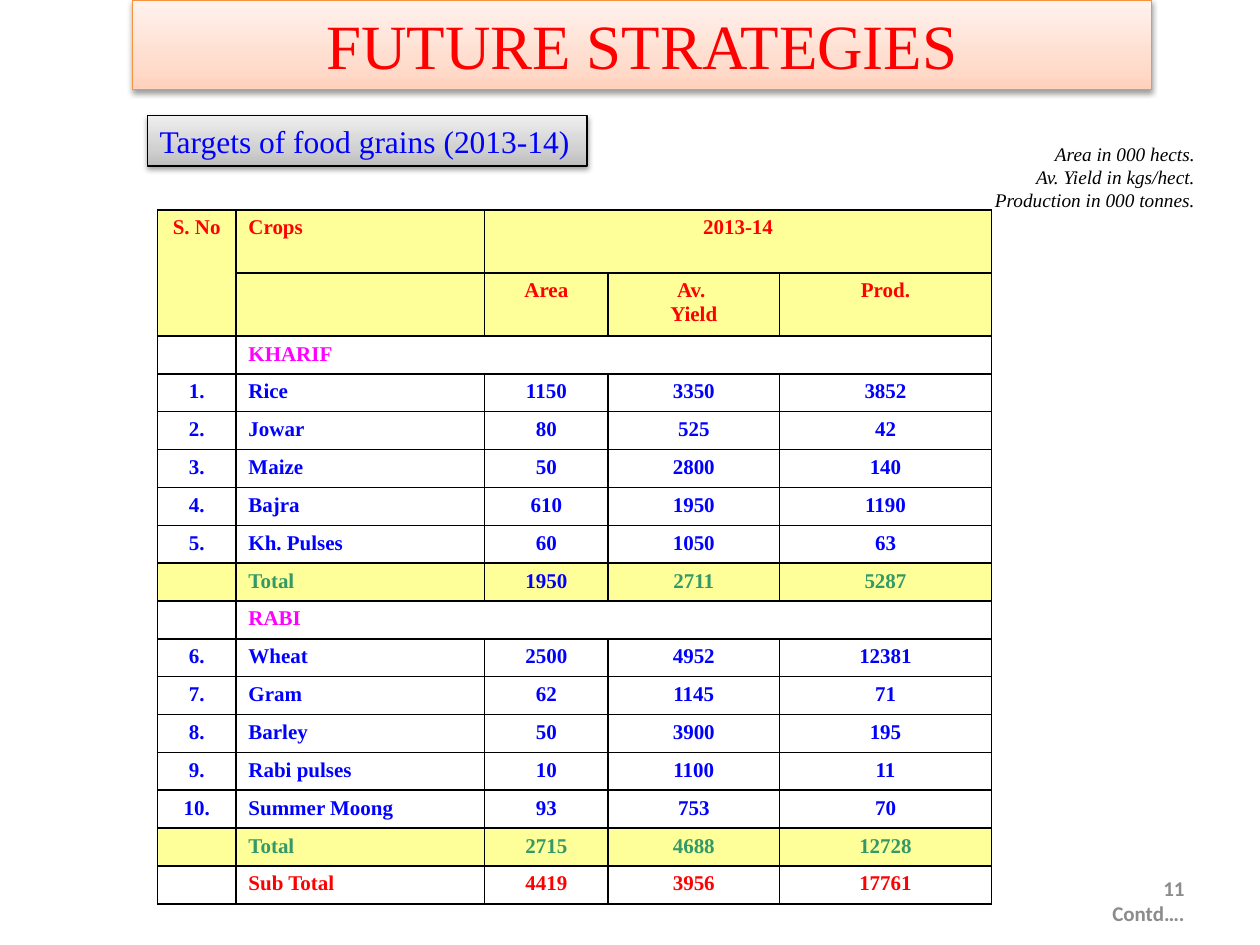
from lxml import etree
from pptx import Presentation
from pptx.dml.color import RGBColor
from pptx.enum import shapes, text
from pptx.oxml import ns
from pptx.util import Pt

RED = RGBColor(0xFF, 0x00, 0x00)
BLUE = RGBColor(0x00, 0x00, 0xFF)
GREEN = RGBColor(0x33, 0x99, 0x66)
MAGENTA = RGBColor(0xFF, 0x00, 0xFF)
YELLOW = RGBColor(0xFF, 0xFF, 0x99)
GREY = RGBColor(0x8C, 0x8C, 0x8C)
BLACK = RGBColor(0x00, 0x00, 0x00)
ORANGE = RGBColor(0xF6, 0x92, 0x40)
PEACH_STOPS = {0: RGBColor(0xFF, 0xD2, 0xBD), 35: RGBColor(0xFF, 0xDE, 0xD0), 100: RGBColor(0xFF, 0xF2, 0xED)}
SILVER_STOPS = {0: RGBColor(0xBD, 0xBD, 0xBD), 35: RGBColor(0xD1, 0xD1, 0xD1), 100: RGBColor(0xEE, 0xEE, 0xEE)}

SERIF = "Times New Roman"
LEFT, CENTER, RIGHT, JUSTIFY = (text.PP_ALIGN.LEFT, text.PP_ALIGN.CENTER,
                                text.PP_ALIGN.RIGHT, text.PP_ALIGN.JUSTIFY)
COLUMN_WIDTHS = [44.8, 142.2, 70.5, 98, 121.1]
HEADER_HEIGHT, ROW_HEIGHT = 36, 21.6

HEADER = [
    ["S. No", "Crops", "2013-14", "", ""],
    ["", "", "Area", "Av. \nYield", "Prod."],
]
KHARIF = [
    ("Rice", "1150", "3350", "3852"),
    ("Jowar", "80", "525", "42"),
    ("Maize", "50", "2800", "140"),
    ("Bajra", "610", "1950", "1190"),
    ("Kh. Pulses", "60", "1050", "63"),
]
RABI = [
    ("Wheat", "2500", "4952", "12381"),
    ("Gram", "62", "1145", "71"),
    ("Barley", "50", "3900", "195"),
    ("Rabi pulses", "10", "1100", "11"),
    ("Summer Moong", "93", "753", "70"),
]


def add_xml(parent, tag, **attributes):
    return etree.SubElement(parent, ns.qn(tag), {key: str(value) for key, value in attributes.items()})


def write(frame, content, size=12, color=BLACK, font=SERIF, align=LEFT, bold=False, italic=False):
    frame.text = content
    for para in frame.paragraphs:
        para.alignment = align
        for span in para.runs:
            span.font.size = Pt(size)
            span.font.name = font
            span.font.bold = bold
            span.font.italic = italic
            span.font.color.rgb = color
        for line_break in para._p.findall(ns.qn("a:br")):
            add_xml(line_break, "a:rPr", sz=size * 100)
        if not para.runs:
            add_xml(para._p, "a:endParaRPr", sz=size * 100)


def add_panel(page, left, top, width, height, stops, outline):
    panel = page.shapes.add_shape(shapes.MSO_SHAPE.RECTANGLE, Pt(left), Pt(top), Pt(width), Pt(height))
    panel.fill.gradient()
    panel.fill.gradient_angle = 90
    stop_list = panel._element.spPr.find(".//" + ns.qn("a:gsLst"))
    for stop in list(stop_list):
        stop_list.remove(stop)
    for position, color in stops.items():
        add_xml(add_xml(stop_list, "a:gs", pos=position * 1000), "a:srgbClr", val=color)
    panel.line.color.rgb = outline
    panel.line.width = Pt(0.75)
    panel.shadow.inherit = False
    effects = panel._element.spPr.find(ns.qn("a:effectLst"))
    shadow = add_xml(effects, "a:outerShdw", blurRad=Pt(3.1), dist=Pt(1.6), dir=5400000, rotWithShape=0)
    add_xml(add_xml(shadow, "a:srgbClr", val=BLACK), "a:alpha", val=38000)
    return panel


def add_title(page, left, top, width, height):
    frame = add_panel(page, left, top, width, height, PEACH_STOPS, ORANGE).text_frame
    frame.vertical_anchor = text.MSO_ANCHOR.MIDDLE
    write(frame, "FUTURE STRATEGIES", size=36, color=RED, align=CENTER)


def add_subtitle(page, left, top, width, height):
    frame = add_panel(page, left, top, width, height, SILVER_STOPS, BLACK).text_frame
    frame.word_wrap = False
    frame.vertical_anchor = text.MSO_ANCHOR.TOP
    write(frame, "Targets of food grains (2013-14)", size=18, color=BLUE, align=JUSTIFY)
    properties = frame.paragraphs[0]._p.get_or_add_pPr()
    properties.set("marL", str(Pt(36)))
    properties.set("indent", str(-Pt(36)))


def add_note(page, left, top, width, height, content, anchor=text.MSO_ANCHOR.TOP, **style):
    frame = page.shapes.add_textbox(Pt(left), Pt(top), Pt(width), Pt(height)).text_frame
    frame.word_wrap = True
    frame.vertical_anchor = anchor
    write(frame, content, align=RIGHT, **style)


def format_cell(cell, content, color, fill, align):
    write(cell.text_frame, content, color=color, align=align, bold=True)
    properties = cell._tc.get_or_add_tcPr()
    for side in ("a:lnL", "a:lnR", "a:lnT", "a:lnB"):
        edge = add_xml(properties, side, w=Pt(1))
        add_xml(add_xml(edge, "a:solidFill"), "a:srgbClr", val=BLACK)
    if fill is None:
        cell.fill.background()
    else:
        cell.fill.solid()
        cell.fill.fore_color.rgb = fill


def season_rows(name, crops, total, first_number):
    rows = [(["", name, "", "", ""], MAGENTA, None)]
    rows += [([f"{number}.", *crop], BLUE, None) for number, crop in enumerate(crops, first_number)]
    return rows + [(["", "Total", *total], GREEN, YELLOW)]


def add_targets_table(page, left, top):
    rows = [(labels, RED, YELLOW) for labels in HEADER]
    rows += season_rows("KHARIF", KHARIF, ("1950", "2711", "5287"), 1)
    kharif_total = len(rows) - 1
    rabi_title = len(rows)
    rows += season_rows("RABI", RABI, ("2715", "4688", "12728"), len(KHARIF) + 1)
    rows.append((["", "Sub Total", "4419", "3956", "17761"], RED, None))
    heights = [HEADER_HEIGHT] * len(HEADER) + [ROW_HEIGHT] * (len(rows) - len(HEADER))

    table = page.shapes.add_table(len(rows), len(COLUMN_WIDTHS), Pt(left), Pt(top),
                                  Pt(sum(COLUMN_WIDTHS)), Pt(sum(heights))).table
    table.first_row = table.horz_banding = False
    for column, width in zip(table.columns, COLUMN_WIDTHS):
        column.width = Pt(width)
    for row, height in zip(table.rows, heights):
        row.height = Pt(height)
    for row_index, (values, color, fill) in enumerate(rows):
        for column_index, value in enumerate(values):
            shade = BLUE if (row_index, column_index) == (kharif_total, 2) else color
            align = LEFT if column_index == 1 else CENTER
            format_cell(table.cell(row_index, column_index), value, shade, fill, align)
    table.cell(0, 0).merge(table.cell(1, 0))
    table.cell(0, 2).merge(table.cell(0, 4))
    for season_row in (len(HEADER), rabi_title):
        table.cell(season_row, 1).merge(table.cell(season_row, 4))


def main():
    deck = Presentation()
    deck.slide_width, deck.slide_height = Pt(720), Pt(540)
    page = deck.slides.add_slide(deck.slide_layouts[6])
    add_note(page, 516, 500.4, 168, 28.8, "11\nContd….", text.MSO_ANCHOR.MIDDLE,
             color=GREY, font="Calibri", bold=True)
    add_title(page, 75.6, 0, 582.5, 51.1)
    add_targets_table(page, 90, 120)
    add_note(page, 414, 77.8, 275.8, 47.5,
             "Area in 000 hects.\vAv. Yield in kgs/hect.\nProduction in 000 tonnes.", size=11, italic=True)
    add_subtitle(page, 84.2, 66.2, 251.3, 28.8)
    deck.save("out.pptx")


if __name__ == "__main__":
    main()
